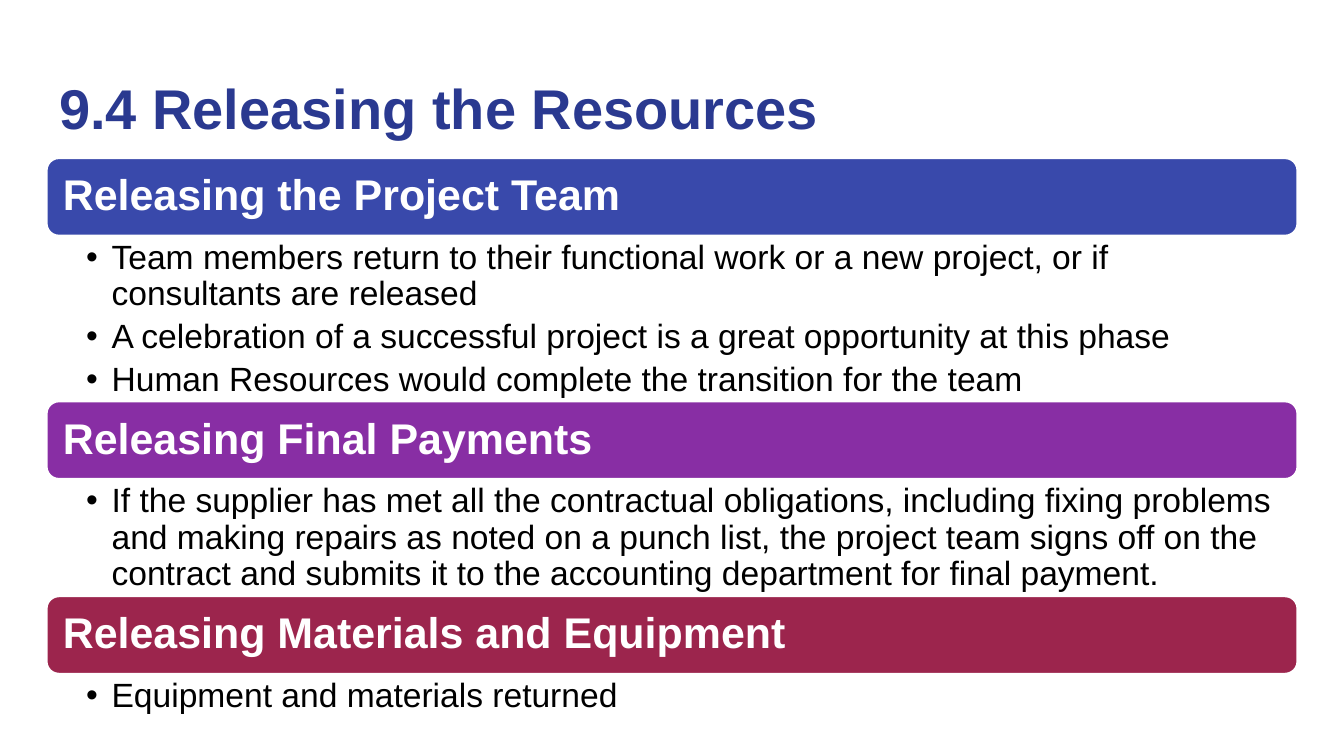
from lxml import etree
from pptx import Presentation
from pptx.dml.color import RGBColor
from pptx.enum.shapes import MSO_SHAPE
from pptx.enum.text import MSO_ANCHOR, PP_ALIGN
from pptx.oxml.ns import qn
from pptx.util import Inches, Pt

LEFT, WIDTH = 0.34, 9.32
SECTIONS_TOP = 1.17
HEADER_HEIGHT = 0.59

SECTIONS = [
    ("Releasing the Project Team", "3949AB", 1.22, [
        "Team members return to their functional work or a new project, or if consultants are released",
        "A celebration of a successful project is a great opportunity at this phase",
        "Human Resources would complete the transition for the team",
    ]),
    ("Releasing Final Payments", "882EA4", 0.86, [
        "If the supplier has met all the contractual obligations, including fixing problems "
        "and making repairs as noted on a punch list, the project team signs off on the "
        "contract and submits it to the accounting department for final payment.",
    ]),
    ("Releasing Materials and Equipment", "9C254D", 0.42, [
        "Equipment and materials returned",
    ]),
]


def color(hex_value):
    return RGBColor.from_string(hex_value)


def box(left, top, width, height):
    return Inches(left), Inches(top), Inches(width), Inches(height)


def set_frame(text_frame, anchor, left, top, right, bottom):
    text_frame.word_wrap = True
    text_frame.vertical_anchor = anchor
    text_frame.margin_left, text_frame.margin_top = Inches(left), Inches(top)
    text_frame.margin_right, text_frame.margin_bottom = Inches(right), Inches(bottom)


def format_runs(paragraph, size, hex_value, bold=False):
    for run in paragraph.runs:
        run.font.name = "Arial"
        run.font.size = Pt(size)
        run.font.bold = bold
        run.font.color.rgb = color(hex_value)


def add_bullet(paragraph, indent):
    properties = paragraph._p.get_or_add_pPr()
    properties.set("marL", str(Inches(indent)))
    properties.set("indent", str(-Inches(indent)))
    bullet_color = etree.SubElement(properties, qn("a:buClr"))
    etree.SubElement(bullet_color, qn("a:srgbClr"), val="000000")
    etree.SubElement(properties, qn("a:buFont"), typeface="Arial")
    etree.SubElement(properties, qn("a:buChar"), char="•")


def place_title(slide, text, left, top, width, height):
    title = slide.shapes.title
    title.left, title.top, title.width, title.height = box(left, top, width, height)
    set_frame(title.text_frame, MSO_ANCHOR.TOP, 0.1, 0.1, 0.1, 0.1)
    title.text_frame.text = text
    paragraph = title.text_frame.paragraphs[0]
    paragraph.alignment = PP_ALIGN.LEFT
    format_runs(paragraph, 30, "2A3990", bold=True)


def add_header(slide, text, fill, left, top, width, height):
    header = slide.shapes.add_shape(MSO_SHAPE.ROUNDED_RECTANGLE, *box(left, top, width, height))
    header.shadow.inherit = False
    header.fill.solid()
    header.fill.fore_color.rgb = color(fill)
    header.line.color.rgb = color("FFFFFF")
    header.line.width = Pt(2)
    set_frame(header.text_frame, MSO_ANCHOR.MIDDLE, 0.1, 0.1, 0.1, 0.1)
    header.text_frame.text = text
    paragraph = header.text_frame.paragraphs[0]
    paragraph.alignment = PP_ALIGN.LEFT
    paragraph.line_spacing = 0.9
    format_runs(paragraph, 23, "FFFFFF", bold=True)


def add_list(slide, items, left, top, width, height):
    text_frame = slide.shapes.add_textbox(*box(left, top, width, height)).text_frame
    set_frame(text_frame, MSO_ANCHOR.TOP, 0.3, 0.03, 0.18, 0.03)
    text_frame.text = "\n".join(items)
    for paragraph in text_frame.paragraphs:
        paragraph.level = 1
        paragraph.line_spacing = 0.9
        paragraph.space_after = Pt(3.6)
        add_bullet(paragraph, 0.19)
        format_runs(paragraph, 18, "000000")


def add_sections(slide, sections, left, top, width):
    for heading, fill, list_height, items in sections:
        add_header(slide, heading, fill, left, top, width, HEADER_HEIGHT)
        top += HEADER_HEIGHT
        add_list(slide, items, left, top, width, list_height)
        top += list_height


def main():
    presentation = Presentation()
    presentation.slide_width = Inches(10)
    presentation.slide_height = Inches(10 * 9 / 16)
    slide = presentation.slides.add_slide(presentation.slide_layouts.get_by_name("Title Only"))
    place_title(slide, "9.4 Releasing the Resources", LEFT, 0.45, WIDTH, 0.66)
    add_sections(slide, SECTIONS, LEFT, SECTIONS_TOP, WIDTH)
    presentation.save("out.pptx")


if __name__ == "__main__":
    main()
